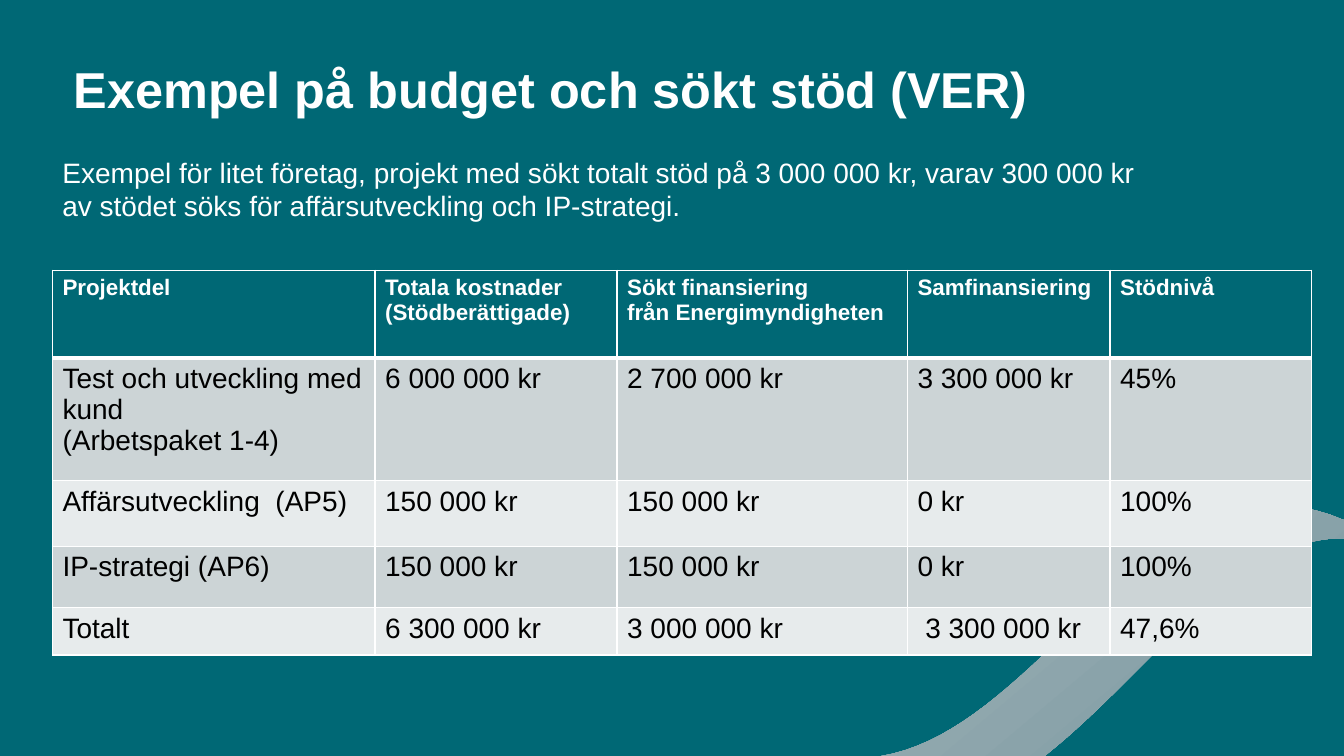
from lxml.etree import SubElement
from pptx import Presentation
from pptx.dml.color import RGBColor
from pptx.enum.text import MSO_ANCHOR, PP_ALIGN
from pptx.oxml.ns import qn
from pptx.util import Inches, Pt

COLORS = {
    "teal": "006875",
    "white": "FFFFFF",
    "black": "000000",
    "dark": "CCD4D6",
    "light": "E7EBEC",
    "start": "9DB2B7",
    "end": "7C98A0",
}


def color(name):
    return RGBColor.from_string(COLORS[name])


def write(frame, text, size=20, ink="white", bold=False, space=1.0):
    frame.word_wrap = True
    frame.vertical_anchor = MSO_ANCHOR.TOP
    frame.text = text
    for para in frame.paragraphs:
        para.alignment = PP_ALIGN.LEFT
        para.line_spacing = space
        for run in para.runs:
            run.font.name = "Arial"
            run.font.size = Pt(size)
            run.font.bold = bold
            run.font.color.rgb = color(ink)


deck = Presentation()
deck.slide_width = Inches(13.33)
deck.slide_height = Inches(7.5)
slide = deck.slides.add_slide(deck.slide_layouts[5])
slide.background.fill.solid()
slide.background.fill.fore_color.rgb = color("teal")

curves = [
    [(10.36, 7.5), (11.41, 6.67), (12.27, 5.32), (13.33, 5.34)],
    [(13.33, 5.16), (11.47, 4.35), (10.38, 7.23), (8.74, 7.5)],
]
steps = 40
points = []
for curve in curves:
    for step in range(steps + 1):
        t = step / steps
        parts = [(1 - t) ** 3, 3 * t * (1 - t) ** 2, 3 * t * t * (1 - t), t ** 3]
        x = sum(part * point[0] for part, point in zip(parts, curve))
        y = sum(part * point[1] for part, point in zip(parts, curve))
        points.append((Inches(x), Inches(y)))
outline = slide.shapes.build_freeform(*points[0])
outline.add_line_segments(points[1:], close=True)
wave = outline.convert_to_shape()
wave.shadow.inherit = False
wave.line.fill.background()
wave.fill.gradient()
wave.fill.gradient_angle = 310
for stop, name, place in zip(wave.fill.gradient_stops, ("start", "end"), (0, 1)):
    stop.color.rgb = color(name)
    stop.position = place

title = slide.shapes.title
title.left, title.top = Inches(0.63), Inches(0.59)
title.width, title.height = Inches(10.36), Inches(1.47)
write(title.text_frame, "Exempel på budget och sökt stöd (VER)",
      size=36, bold=True, space=0.9)

intro = slide.shapes.add_textbox(Inches(0.52), Inches(1.49), Inches(11.04), Inches(0.77))
write(intro.text_frame,
      "Exempel för litet företag, projekt med sökt totalt stöd på 3 000 000 kr, "
      "varav 300 000 kr av stödet söks för affärsutveckling och IP-strategi.")

rows = [
    ["Projektdel", "Totala kostnader\n(Stödberättigade)",
     "Sökt finansiering\nfrån Energimyndigheten", "Samfinansiering", "Stödnivå"],
    ["Test och utveckling med kund\n(Arbetspaket 1-4)",
     "6 000 000 kr", "2 700 000 kr", "3 300 000 kr", "45%"],
    ["Affärsutveckling  (AP5)", "150 000 kr", "150 000 kr", "0 kr", "100%"],
    ["IP-strategi (AP6)", "150 000 kr", "150 000 kr", "0 kr", "100%"],
    ["Totalt", "6 300 000 kr", "3 000 000 kr", " 3 300 000 kr", "47,6%"],
]
widths = [3.2, 2.4, 2.88, 2.01, 2]
heights = [0.87, 1.22, 0.65, 0.61, 0.47]
table = slide.shapes.add_table(len(rows), len(widths), Inches(0.52), Inches(2.68),
                               Inches(sum(widths)), Inches(sum(heights))).table
for column, width in zip(table.columns, widths):
    column.width = Inches(width)
for r, (texts, height) in enumerate(zip(rows, heights)):
    table.rows[r].height = Inches(height)
    head = r == 0
    for c, text in enumerate(texts):
        cell = table.cell(r, c)
        write(cell.text_frame, text, size=16 if head else 20,
              ink="white" if head else "black", bold=head)
        props = cell._tc.get_or_add_tcPr()
        for side in "LRTB":
            thick = (r, side) in ((0, "B"), (1, "T"))
            edge = SubElement(props, qn("a:ln" + side), w=str(Pt(3 if thick else 1)))
            solid = SubElement(edge, qn("a:solidFill"))
            SubElement(solid, qn("a:srgbClr"), val=COLORS["white"])
        cell.fill.solid()
        cell.fill.fore_color.rgb = color("teal" if head else "dark" if r % 2 else "light")

deck.save("out.pptx")
